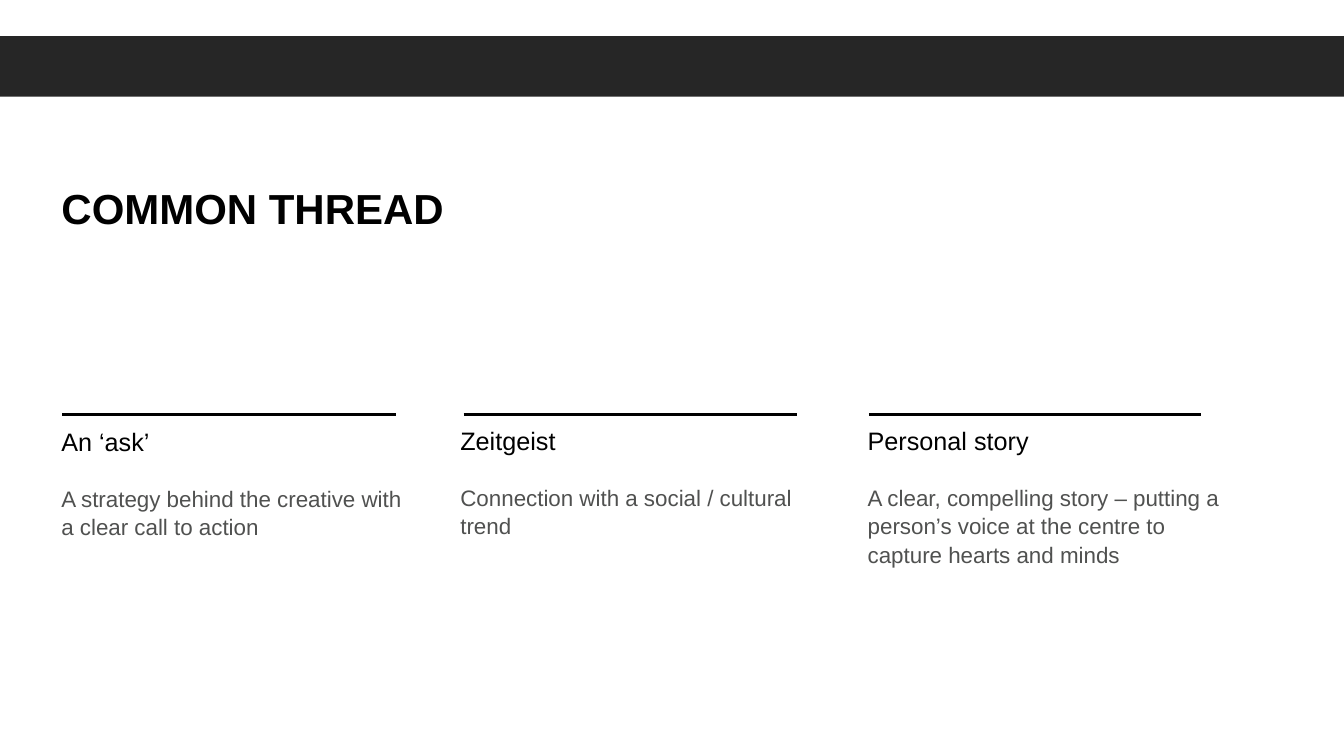
from lxml import etree
from pptx import Presentation
from pptx import util as u
from pptx.dml.color import RGBColor
from pptx.enum import shapes, text
from pptx.oxml.ns import qn

HUES = {"band": "262626", "ink": "000000", "gray": "505150"}
HEAD = {"size": u.Pt(18), "bold": False}
BODY = {"size": u.Pt(16), "bold": False}
TITLE = {"size": u.Pt(30), "bold": True}


class Deck:
    font = "Arial"
    pitch = 1.05

    def __init__(self, wide, high):
        self.file = Presentation()
        self.file.slide_width = u.Pt(wide)
        self.file.slide_height = u.Pt(high)
        self.page = self.file.slides.add_slide(self.file.slide_layouts[5])

    def hue(self, name):
        return RGBColor.from_string(HUES[name])

    def label(self, para, words, hue, style, gap=0):
        para.text = words
        form = {"alignment": text.PP_ALIGN.LEFT, "line_spacing": self.pitch,
                "space_before": u.Pt(gap), "space_after": u.Pt(0)}
        for key, val in form.items():
            setattr(para, key, val)
        for key, val in {"name": self.font, **style}.items():
            setattr(para.font, key, val)
        para.font.color.rgb = self.hue(hue)

    def frame(self, shape):
        form = {"word_wrap": True, "auto_size": text.MSO_AUTO_SIZE.NONE,
                "vertical_anchor": text.MSO_ANCHOR.TOP}
        for key, val in form.items():
            setattr(shape.text_frame, key, val)
        return shape.text_frame

    def title(self, words, x, y, w, h):
        shape = self.page.shapes.title
        for key, val in {"left": x, "top": y, "width": w, "height": h}.items():
            setattr(shape, key, u.Pt(val))
        self.label(self.frame(shape).paragraphs[0], words, "ink", TITLE)

    def band(self, x, y, w, h):
        shape = self.page.shapes.add_shape(
            shapes.MSO_SHAPE.RECTANGLE, *map(u.Pt, (x, y, w, h)))
        shape.shadow.inherit = False
        shape.fill.solid()
        shape.fill.fore_color.rgb = self.hue("band")
        shape.line.fill.background()

    def rule(self, x, y, w):
        line = self.page.shapes.add_connector(
            shapes.MSO_CONNECTOR.STRAIGHT, *map(u.Pt, (x, y, x + w, y)))
        line.line.color.rgb = self.hue("ink")
        line.line.width = u.Pt(2.25)
        etree.SubElement(line._element.spPr, qn("a:effectLst"))

    def column(self, head, body, x, y, w, h):
        box = self.page.shapes.add_textbox(*map(u.Pt, (x, y, w, h)))
        frame = self.frame(box)
        self.label(frame.paragraphs[0], head, "ink", HEAD)
        self.label(frame.add_paragraph(), body, "gray", BODY, 19.3)

    def save(self):
        self.file.save("out.pptx")


def main():
    deck = Deck(960, 540)
    deck.band(0, 25.9, 960, 43.2)
    deck.title("COMMON THREAD", 36.7, 125.3, 314, 43.9)
    points = [
        ("An ‘ask’", "A strategy behind the creative with a clear call to action",
         36.7, 300.2, 87.1, 44.6, 238.3),
        ("Zeitgeist", "Connection with a social / cultural trend",
         321.8, 299.5, 87.1, 331.2, 238.3),
        ("Personal story", "A clear, compelling story – putting a person’s voice "
         "at the centre to capture hearts and minds",
         612.7, 299.5, 106.6, 620.6, 237.6),
    ]
    for head, body, x, y, h, start, span in points:
        deck.column(head, body, x, y, 269.3, h)
        deck.rule(start, 295.9, span)
    deck.save()


if __name__ == "__main__":
    main()
